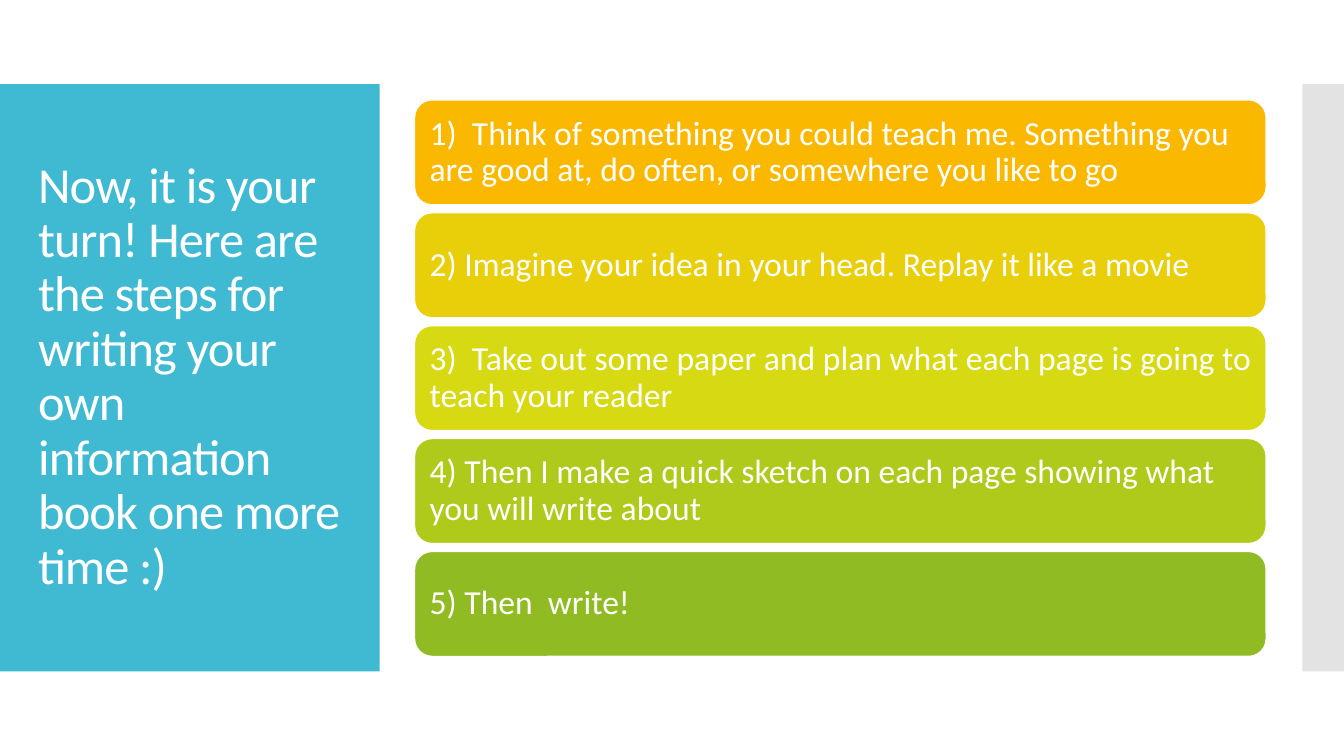
"""Build a slide listing the five steps for writing an information book."""
from lxml.etree import SubElement
from pptx import Presentation
from pptx.dml.color import RGBColor
from pptx.enum.shapes import MSO_SHAPE as SHAPE
from pptx.enum.text import MSO_ANCHOR as ANCHOR, MSO_AUTO_SIZE as AUTO, PP_ALIGN as ALIGN
from pptx.oxml.ns import qn
from pptx.util import Pt

WHITE = RGBColor(0xFF, 0xFF, 0xFF)
TEAL = RGBColor(0x40, 0xBA, 0xD2)
GREY = RGBColor(0xC8, 0xC8, 0xC8)
AMBER = RGBColor(0xFA, 0xB9, 0x00)
GOLD = RGBColor(0xE9, 0xCE, 0x0A)
LIME = RGBColor(0xD7, 0xD9, 0x13)
LEAF = RGBColor(0xB0, 0xCA, 0x1B)
GREEN = RGBColor(0x90, 0xBB, 0x23)

STEPS = [
    (AMBER, "1)  Think of something you could teach me. Something you are good at, do often, or somewhere you like to go"),
    (GOLD, "2) Imagine your idea in your head. Replay it like a movie"),
    (LIME, "3)  Take out some paper and plan what each page is going to teach your reader"),
    (LEAF, "4) Then I make a quick sketch on each page showing what you will write about"),
    (GREEN, "5) Then  write!"),
]
STEP_TOP, STEP_HEIGHT, STEP_PITCH = 71.4, 74.9, 80.64


def add_block(kind, left, top, width, height, color):
    sp = s.shapes.add_shape(kind, Pt(left), Pt(top), Pt(width), Pt(height))
    sp.shadow.inherit = False
    sp.fill.solid()
    sp.fill.fore_color.rgb = color
    sp.line.fill.background()
    return sp


def write_text(tf, text, size):
    tf.word_wrap = True
    tf.auto_size = AUTO.NONE
    tf.vertical_anchor = ANCHOR.MIDDLE
    p = tf.paragraphs[0]
    p.alignment = ALIGN.LEFT
    p.line_spacing = 0.9
    r = p.add_run()
    r.text = text
    r.font.name = "Calibri"
    r.font.size = Pt(size)
    r.font.color.rgb = WHITE
    return r


prs = Presentation()
prs.slide_width, prs.slide_height = Pt(960), Pt(540)
s = prs.slides.add_slide(prs.slide_layouts[5])

add_block(SHAPE.RECTANGLE, 0, 60, 271.2, 419.5, TEAL)
edge = add_block(SHAPE.RECTANGLE, 930.2, 60, 29.8, 419.5, GREY)
edge_color = edge.element.spPr.find(qn("a:solidFill"))[0]
SubElement(edge_color, qn("a:alpha"), val="50000")

title = s.shapes.title
title.left, title.top, title.width, title.height = Pt(20), Pt(88.5), Pt(232), Pt(362)
r = write_text(title.text_frame, "Now, it is your turn! Here are the steps for writing your own information book one more time :)", 36)
r.font._element.set("spc", "-60")
title.element.getparent().append(title.element)

for i, (color, text) in enumerate(STEPS):
    sp = add_block(SHAPE.ROUNDED_RECTANGLE, 296.2, STEP_TOP + i * STEP_PITCH, 608.2, STEP_HEIGHT, color)
    sp.line.color.rgb = WHITE
    sp.line.width = Pt(0.85)
    tf = sp.text_frame
    tf.margin_left = tf.margin_right = tf.margin_top = tf.margin_bottom = Pt(7.2)
    write_text(tf, text, 24)

prs.save("out.pptx")
